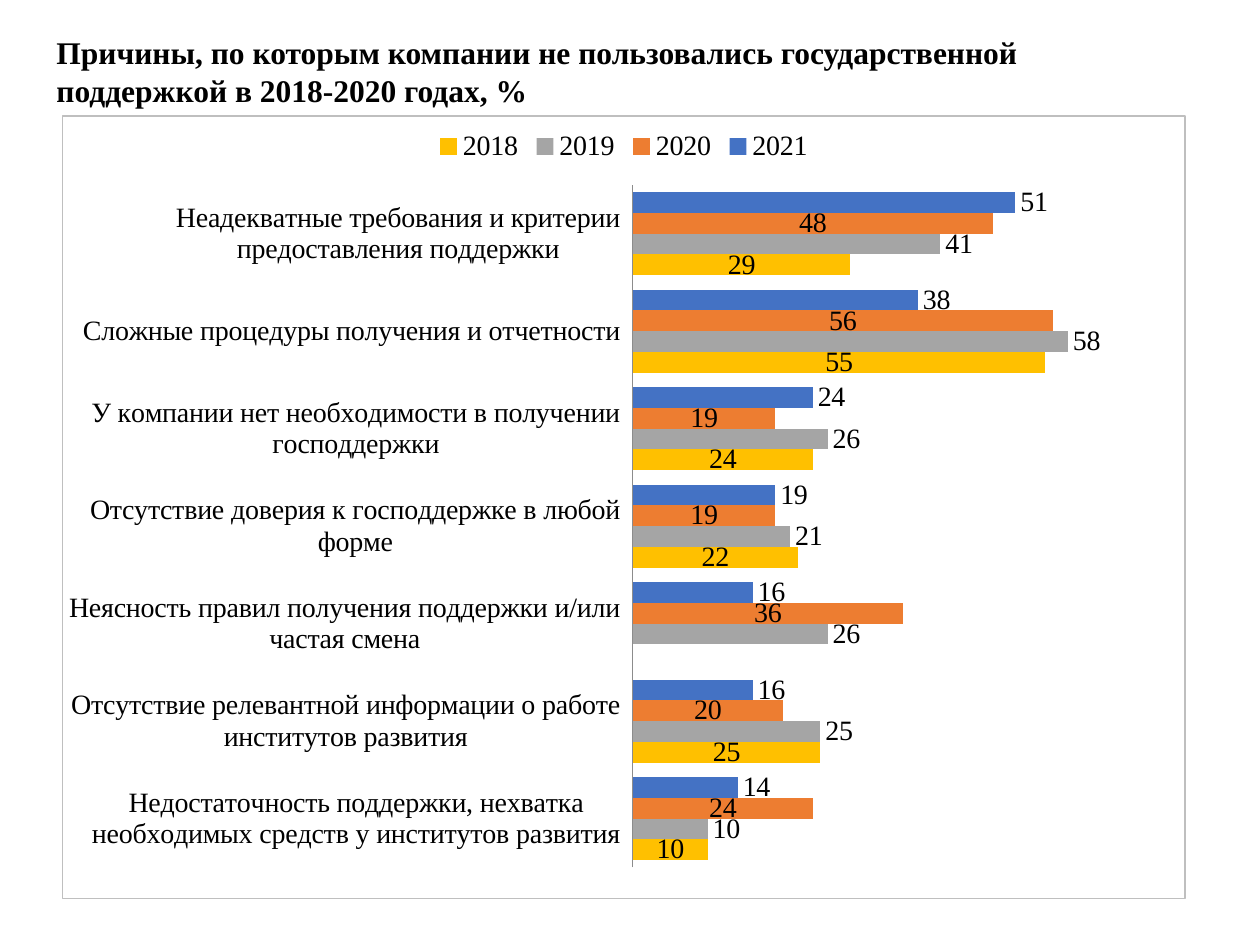
from lxml.etree import SubElement
from pptx import Presentation
from pptx.chart.data import CategoryChartData
from pptx.dml.color import RGBColor
from pptx.enum.chart import (XL_CHART_TYPE, XL_LABEL_POSITION,
                             XL_LEGEND_POSITION, XL_TICK_LABEL_POSITION,
                             XL_TICK_MARK)
from pptx.oxml import parse_xml
from pptx.oxml.ns import nsdecls, qn
from pptx.util import Pt

BLACK = RGBColor(0x00, 0x00, 0x00)
GREY = RGBColor(0x8C, 0x8C, 0x8C)
FRAME = RGBColor(0xBF, 0xBF, 0xBF)
BLUE = RGBColor(0x44, 0x72, 0xC4)
ORANGE = RGBColor(0xED, 0x7D, 0x31)
SILVER = RGBColor(0xA5, 0xA5, 0xA5)
GOLD = RGBColor(0xFF, 0xC0, 0x00)
FACE = "Times New Roman"

TITLE = ("Причины, по которым компании не пользовались государственной "
         "поддержкой в 2018-2020 годах, %")
REASONS = [
    "Неадекватные требования и критерии предоставления поддержки",
    "Сложные процедуры получения и отчетности",
    "У компании нет необходимости в получении господдержки",
    "Отсутствие доверия к господдержке в любой форме",
    "Неясность правил получения поддержки и/или частая смена",
    "Отсутствие релевантной информации о работе институтов развития",
    "Недостаточность поддержки, нехватка необходимых средств "
    "у институтов развития",
]
END, MID = XL_LABEL_POSITION.OUTSIDE_END, XL_LABEL_POSITION.CENTER
# Year, shares by reason, colour, label position, label format
YEARS = [
    ("2021", [51, 38, 24, 19, 16, 16, 14], BLUE, END, "#,##0"),
    ("2020", [48, 56, 19, 19, 36, 20, 24], ORANGE, MID, "0"),
    ("2019", [41, 58, 26, 21, 26, 25, 10], SILVER, END, "0"),
    ("2018", [29, 55, 24, 22, None, 25, 10], GOLD, MID, "0"),
]


def style(item, **values):
    for name, value in values.items():
        setattr(item, name, value)


def paint(font, size, bold=False):
    style(font, name=FACE, size=Pt(size), bold=bold)
    font.color.rgb = BLACK


def add_title(slide, box):
    frame = slide.shapes.add_textbox(*map(Pt, box)).text_frame
    frame.word_wrap = True
    run = frame.paragraphs[0].add_run()
    run.text = TITLE
    paint(run.font, 18, True)


def place_plot(chart, x, y, w, h):
    """Fix the inner plot area, in shares of the chart."""
    area = chart.element.find(".//" + qn("c:plotArea"))
    for old in area.findall(qn("c:layout")):
        area.remove(old)
    layout = parse_xml(f"<c:layout {nsdecls('c')}/>")
    area.insert(0, layout)
    manual = SubElement(layout, qn("c:manualLayout"))
    parts = dict(layoutTarget="inner", xMode="edge", yMode="edge",
                 x=x, y=y, w=w, h=h)
    for tag, value in parts.items():
        SubElement(manual, qn("c:" + tag)).set("val", str(value))


def add_frame(chart):
    """Outline the whole chart."""
    chart.element.find(qn("c:chart")).addnext(parse_xml(
        f'<c:spPr {nsdecls("c", "a")}><a:noFill/><a:ln w="{Pt(0.75)}">'
        f'<a:solidFill><a:srgbClr val="{FRAME}"/></a:solidFill></a:ln>'
        '</c:spPr>'))


def add_bars(slide, box):
    data = CategoryChartData()
    data.categories = REASONS
    for year, shares, *_ in YEARS:
        data.add_series(year, shares)
    chart = slide.shapes.add_chart(
        XL_CHART_TYPE.BAR_CLUSTERED, *map(Pt, box), data).chart
    paint(chart.font, 16)
    style(chart, has_title=False, has_legend=True)
    style(chart.legend, position=XL_LEGEND_POSITION.TOP,
          include_in_layout=False)

    # Axes
    reasons = chart.category_axis
    style(reasons, reverse_order=True, has_major_gridlines=False,
          major_tick_mark=XL_TICK_MARK.NONE,
          tick_label_position=XL_TICK_LABEL_POSITION.LOW)
    reasons.format.line.color.rgb = GREY
    reasons.format.line.width = Pt(0.75)
    style(chart.value_axis, visible=False, has_major_gridlines=False,
          minimum_scale=0, maximum_scale=70)

    # Bars and their labels
    plot = chart.plots[0]
    style(plot, gap_width=70, overlap=0, vary_by_categories=False)
    for bars, (_, _, color, spot, form) in zip(plot.series, YEARS):
        bars.format.fill.solid()
        bars.format.fill.fore_color.rgb = color
        style(bars.data_labels, show_value=True, position=spot,
              number_format=form, number_format_is_linked=False)
        paint(bars.data_labels.font, 16)

    place_plot(chart, 0.508, 0.088, 0.468, 0.872)
    add_frame(chart)


def main():
    deck = Presentation()
    style(deck, slide_width=Pt(720), slide_height=Pt(540))
    slide = deck.slides.add_slide(deck.slide_layouts[6])
    add_bars(slide, (35.5, 66, 642, 448))
    add_title(slide, (25.2, 15.2, 662, 51))
    deck.save("out.pptx")


if __name__ == "__main__":
    main()
